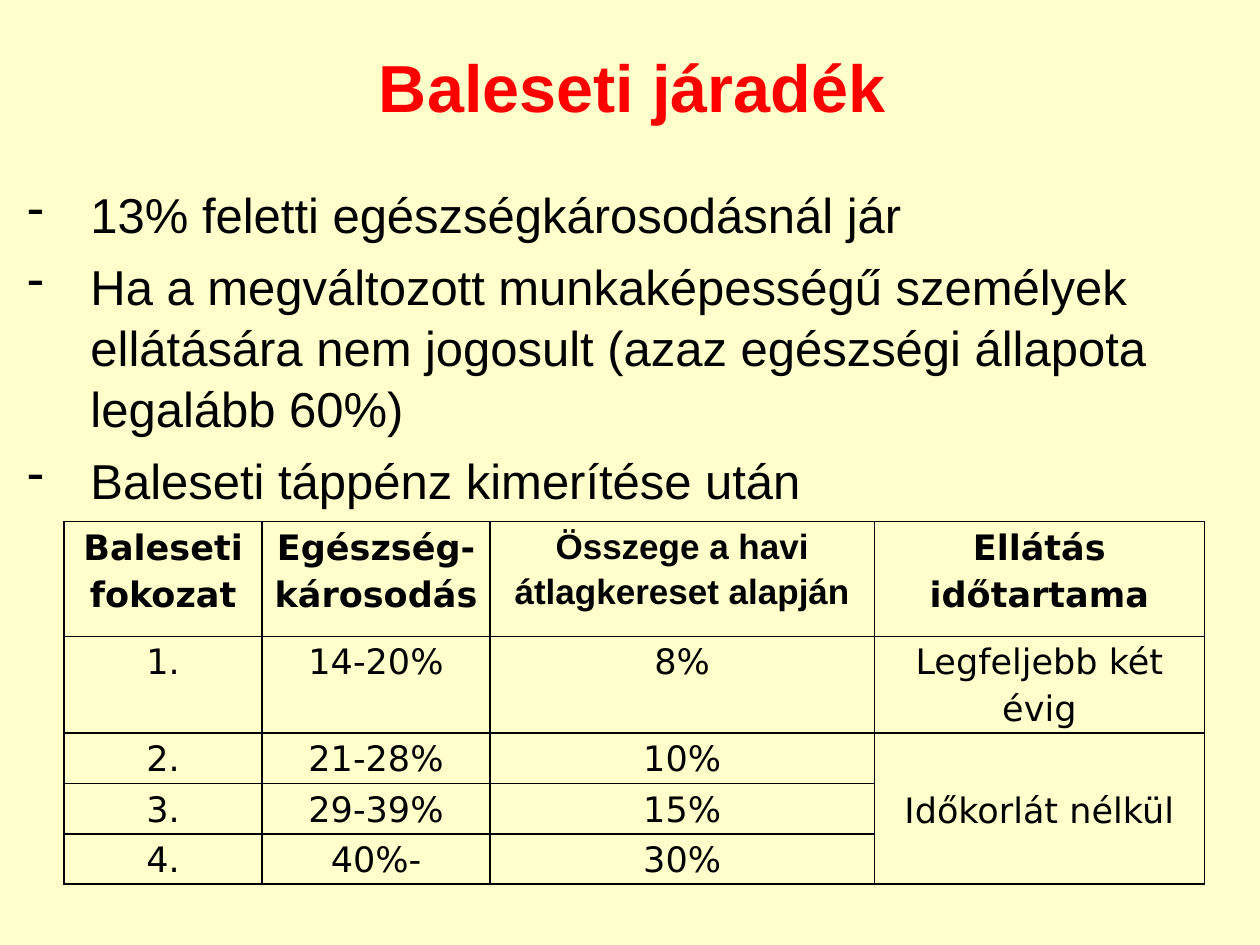
from lxml import etree
from pptx import Presentation
from pptx.dml.color import RGBColor
from pptx.enum.text import MSO_ANCHOR, PP_ALIGN
from pptx.oxml.ns import qn
from pptx.util import Inches, Pt

CENTER = PP_ALIGN.CENTER
MIDDLE = MSO_ANCHOR.MIDDLE
BACKGROUND = RGBColor(0xFF, 0xFF, 0xCC)
RED = RGBColor(0xFF, 0x00, 0x00)
BLACK = RGBColor(0x00, 0x00, 0x00)
SANS = "Arial"
TABLE_FONT = "DejaVu Sans"

CONDITIONS = [
    "13% feletti egészségkárosodásnál jár",
    "Ha a megváltozott munkaképességű személyek ellátására nem jogosult "
    "(azaz egészségi állapota legalább 60%)",
    "Baleseti táppénz kimerítése után",
]
COLUMN_WIDTHS = [1.57, 1.81, 3.05, 2.62]
ROW_HEIGHTS = [0.91, 0.4, 0.4, 0.4, 0.4]
BENEFIT_ROWS = [
    ["Baleseti fokozat", "Egészség-károsodás",
     "Összege a havi átlagkereset alapján", "Ellátás időtartama"],
    ["1.", "14-20%", "8%", "Legfeljebb két évig"],
    ["2.", "21-28%", "10%", "Időkorlát nélkül"],
    ["3.", "29-39%", "15%", ""],
    ["4.", "40%-", "30%", ""],
]


def format_runs(paragraph, size, font, color=BLACK, bold=False):
    for run in paragraph.runs:
        run.font.size = Pt(size)
        run.font.name = font
        run.font.bold = bold
        run.font.color.rgb = color


def add_text_frame(slide, left, top, width, height):
    box = slide.shapes.add_textbox(Inches(left), Inches(top), Inches(width), Inches(height))
    box.text_frame.word_wrap = True
    return box.text_frame


def add_title(slide, text):
    text_frame = add_text_frame(slide, 0.52, 0.21, 9, 0.95)
    text_frame.vertical_anchor = MIDDLE
    text_frame.text = text
    paragraph = text_frame.paragraphs[0]
    paragraph.alignment = CENTER
    format_runs(paragraph, 38, SANS, RED, bold=True)


def add_dash_list(slide, items):
    text_frame = add_text_frame(slide, 0.12, 1.4, 9.8, 5.75)
    text_frame.text = "\n".join(items)
    for paragraph in text_frame.paragraphs:
        paragraph.line_spacing = 1.04
        paragraph.space_after = Pt(6)
        format_runs(paragraph, 28, SANS)
        # Hanging indent with a dash as the bullet
        properties = paragraph._p.get_or_add_pPr()
        properties.set("marL", str(Inches(0.5)))
        properties.set("indent", str(-Inches(0.5)))
        etree.SubElement(properties, qn("a:buChar"), char="-")


def set_borders(cell):
    properties = cell._tc.get_or_add_tcPr()
    for position, side in enumerate(("a:lnL", "a:lnR", "a:lnT", "a:lnB")):
        line = etree.Element(qn(side), w=str(Pt(1)))
        fill = etree.SubElement(line, qn("a:solidFill"))
        etree.SubElement(fill, qn("a:srgbClr"), val=str(BLACK))
        properties.insert(position, line)


def format_cell(cell, text, font, bold):
    cell.fill.background()
    cell.margin_left = cell.margin_right = Inches(0.07)
    cell.margin_top = cell.margin_bottom = 0
    cell.text_frame.text = text
    paragraph = cell.text_frame.paragraphs[0]
    paragraph.alignment = CENTER
    paragraph.line_spacing = 1.15
    paragraph.space_after = Pt(10)
    format_runs(paragraph, 20, font, bold=bold)
    set_borders(cell)


def add_benefit_table(slide):
    frame = slide.shapes.add_table(
        len(ROW_HEIGHTS), len(COLUMN_WIDTHS), Inches(0.51), Inches(4.14),
        Inches(sum(COLUMN_WIDTHS)), Inches(sum(ROW_HEIGHTS)))
    table = frame.table
    for column, width in zip(table.columns, COLUMN_WIDTHS):
        column.width = Inches(width)
    for row, height in zip(table.rows, ROW_HEIGHTS):
        row.height = Inches(height)
    for row_index, texts in enumerate(BENEFIT_ROWS):
        is_header = row_index == 0
        for column_index, text in enumerate(texts):
            font = SANS if is_header and column_index == 2 else TABLE_FONT
            format_cell(table.cell(row_index, column_index), text, font, is_header)
    # One duration applies to grades 2 to 4
    duration = table.cell(2, 3)
    duration.merge(table.cell(4, 3))
    duration.vertical_anchor = MIDDLE


def main():
    presentation = Presentation()
    presentation.slide_width = Inches(10)
    presentation.slide_height = Inches(7.5)
    slide = presentation.slides.add_slide(presentation.slide_layouts[6])
    slide.background.fill.solid()
    slide.background.fill.fore_color.rgb = BACKGROUND
    add_title(slide, "Baleseti járadék")
    add_dash_list(slide, CONDITIONS)
    add_benefit_table(slide)
    presentation.save("out.pptx")


if __name__ == "__main__":
    main()
